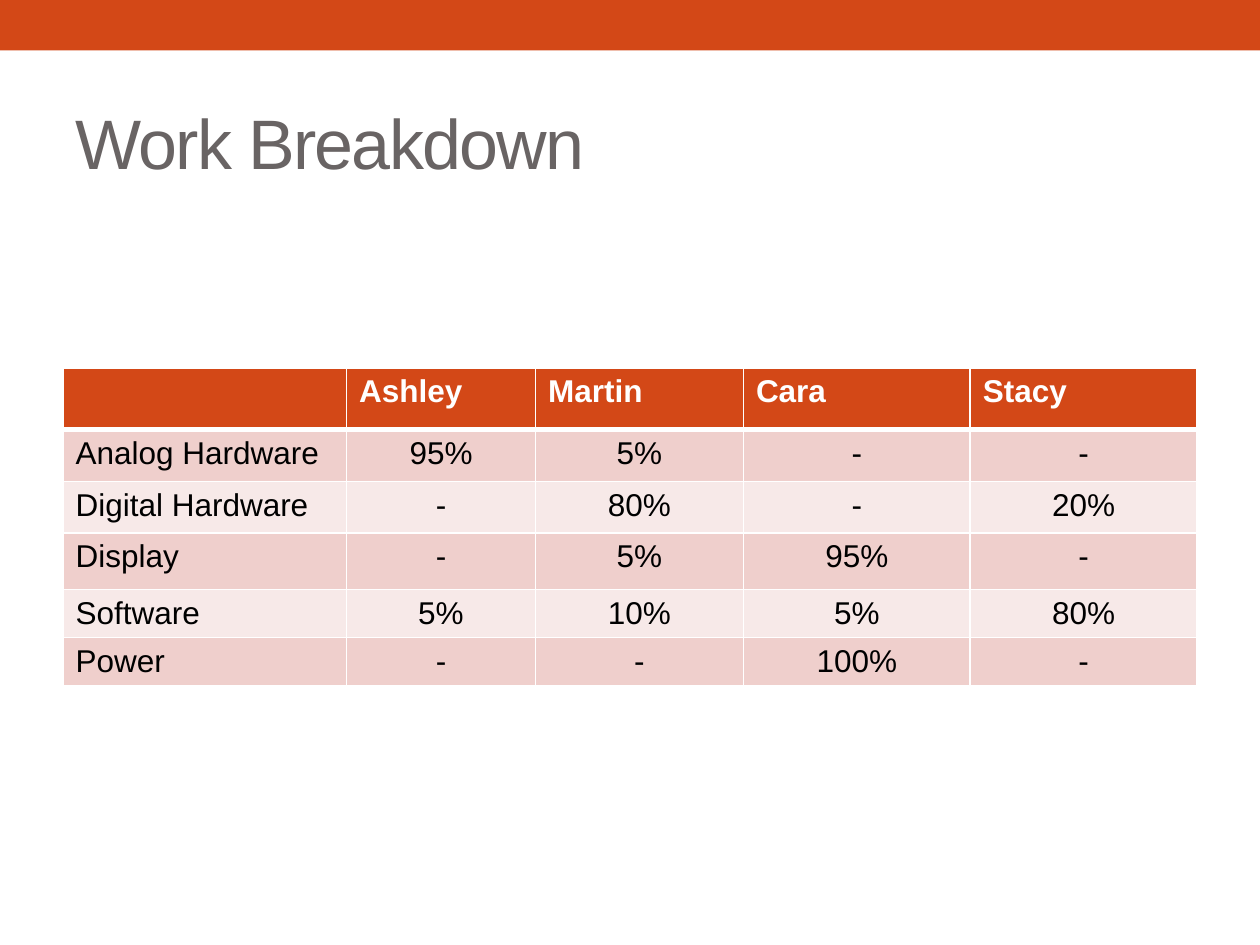
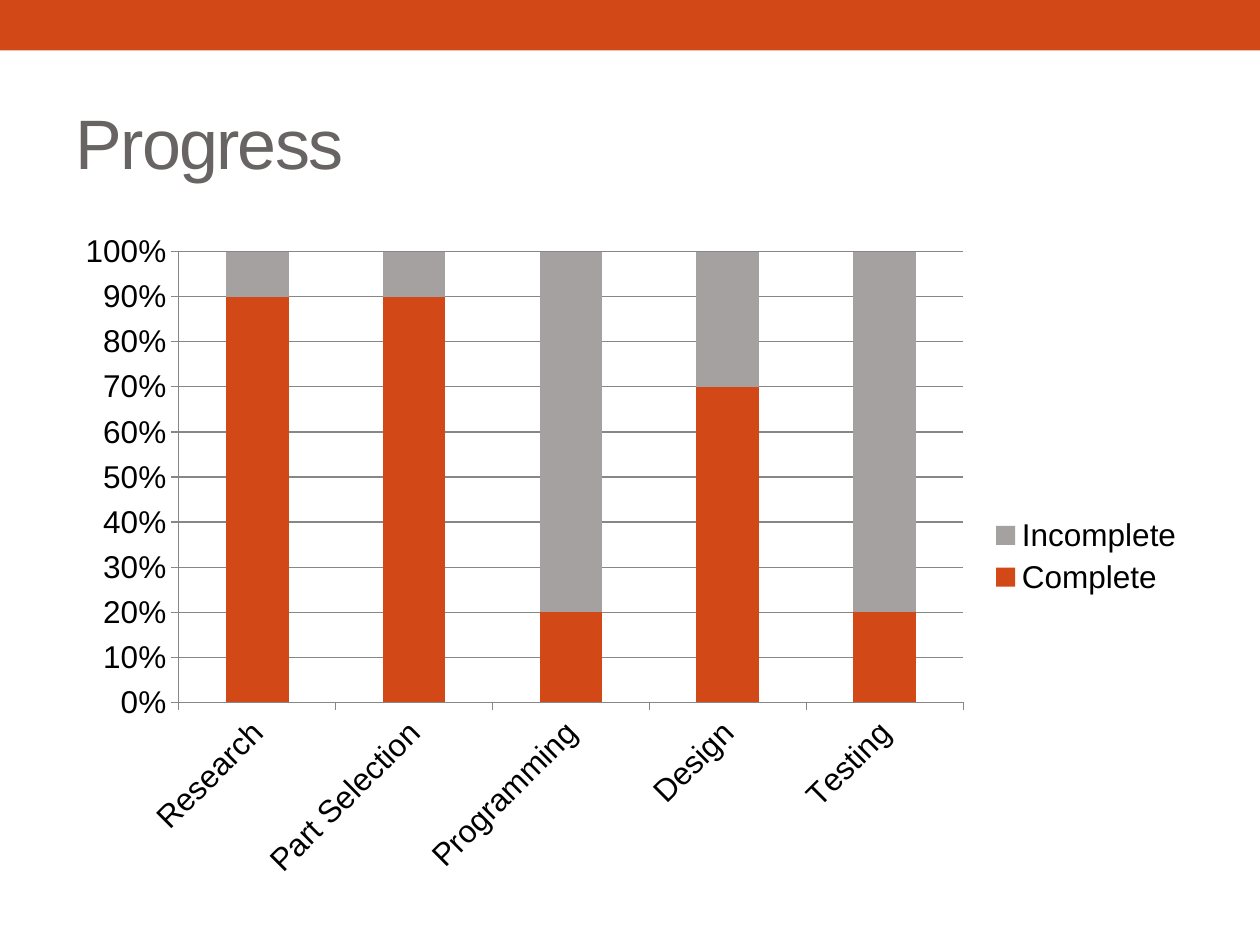
from dataclasses import dataclass

from lxml.etree import SubElement
from pptx import Presentation
from pptx.chart.data import CategoryChartData
from pptx.dml.color import RGBColor
from pptx.enum.chart import XL_CHART_TYPE, XL_LEGEND_POSITION, XL_TICK_MARK
from pptx.enum.shapes import MSO_SHAPE
from pptx.enum.text import MSO_ANCHOR, PP_ALIGN
from pptx.oxml.ns import qn
from pptx.util import Inches, Pt

# Shared look
FONT = "Arial"
ORANGE, GREY, TITLE_GREY = "D34817", "A6A1A1", "696464"
PINK, PALE_PINK = "EFCFCC", "F7E9E8"
WHITE, BLACK, LINE_GREY = "FFFFFF", "000000", "878787"
TITLE_FORMAT = {"name": FONT, "size": Pt(40), "bold": False}
BODY_FORMAT = {"name": FONT, "size": Pt(18), "bold": False}
HEADER_FORMAT = BODY_FORMAT | {"bold": True}


@dataclass(frozen=True)
class Box:
    left: float
    top: float
    width: float
    height: float

    def lengths(self):
        return tuple(Inches(value) for value in
                     (self.left, self.top, self.width, self.height))


@dataclass(frozen=True)
class Series:
    name: str
    values: tuple[int, ...]
    color: str


BAND_BOX = Box(0, 0, 10, 0.4)
TITLE_BOX = Box(0.5, 0.58, 9, 1.08)
TABLE_BOX = Box(0.5, 2.92, 9, 2.52)
CHART_BOX = Box(0.5, 1.75, 9, 5.33)

# Slide contents
PEOPLE = ("", "Ashley", "Martin", "Cara", "Stacy")
WORK_SHARES = (
    ("Analog Hardware", "95%", "5%", "-", "-"),
    ("Digital Hardware", "-", "80%", "-", "20%"),
    ("Display", "-", "5%", "95%", "-"),
    ("Software", "5%", "10%", "5%", "80%"),
    ("Power", "-", "-", "100%", "-"),
)
COLUMN_WIDTHS = (2.25, 1.5, 1.65, 1.8, 1.8)
ROW_HEIGHTS = (0.49, 0.41, 0.41, 0.45, 0.38, 0.38)

TASKS = ("Research", "Part Selection", "Programming", "Design", "Testing")
COMPLETE = (90, 90, 20, 70, 20)
PROGRESS = (
    Series("Complete", COMPLETE, ORANGE),
    Series("Incomplete", tuple(100 - value for value in COMPLETE), GREY),
)


def rgb(color: str) -> RGBColor:
    return RGBColor.from_string(color)


def set_values(target, values: dict) -> None:
    for name, value in values.items():
        setattr(target, name, value)


def set_fill(target, color: str) -> None:
    target.fill.solid()
    target.fill.fore_color.rgb = rgb(color)


def set_font(font, values: dict, color: str) -> None:
    set_values(font, values)
    font.color.rgb = rgb(color)


def add_titled_slide(presentation, title_text: str):
    """Add a slide with the top band and the title."""
    slide = presentation.slides.add_slide(presentation.slide_layouts[5])
    band = slide.shapes.add_shape(MSO_SHAPE.RECTANGLE, *BAND_BOX.lengths())
    band.shadow.inherit = False
    set_fill(band, ORANGE)
    band.line.fill.background()

    title = slide.shapes.title
    set_values(title, dict(zip(("left", "top", "width", "height"),
                               TITLE_BOX.lengths())))
    title.text_frame.text = title_text
    title.text_frame.vertical_anchor = MSO_ANCHOR.MIDDLE
    paragraph = title.text_frame.paragraphs[0]
    paragraph.alignment = PP_ALIGN.LEFT
    run = paragraph.runs[0]
    set_font(run.font, TITLE_FORMAT, TITLE_GREY)
    run.font._element.set("spc", "-100")
    return slide


def set_borders(cell, widths: dict[str, float]) -> None:
    """Draw white borders; they must come before the cell's fill."""
    properties = cell._tc.get_or_add_tcPr()
    for side, width in widths.items():
        line = SubElement(properties, qn(f"a:{side}"), w=str(Pt(width)))
        fill = SubElement(line, qn("a:solidFill"))
        SubElement(fill, qn("a:srgbClr"), val=WHITE)


def add_work_table(slide) -> None:
    rows = (PEOPLE, *WORK_SHARES)
    table = slide.shapes.add_table(
        len(rows), len(PEOPLE), *TABLE_BOX.lengths()).table
    for column, width in zip(table.columns, COLUMN_WIDTHS):
        column.width = Inches(width)
    for row, height in zip(table.rows, ROW_HEIGHTS):
        row.height = Inches(height)

    for row_index, texts in enumerate(rows):
        is_header = row_index == 0
        row_fill = ORANGE if is_header else (PALE_PINK, PINK)[row_index % 2]
        borders = {"lnL": 1, "lnR": 1,
                   "lnT": 3 if row_index == 1 else 1,
                   "lnB": 3 if is_header else 1}
        for column_index, text in enumerate(texts):
            cell = table.cell(row_index, column_index)
            cell.text = text
            set_borders(cell, borders)
            set_fill(cell, row_fill)
            paragraph = cell.text_frame.paragraphs[0]
            centred = not is_header and column_index > 0
            paragraph.alignment = PP_ALIGN.CENTER if centred else PP_ALIGN.LEFT
            for run in paragraph.runs:
                set_font(run.font,
                         HEADER_FORMAT if is_header else BODY_FORMAT,
                         WHITE if is_header else BLACK)


def add_progress_chart(slide) -> None:
    data = CategoryChartData()
    data.categories = TASKS
    for series in PROGRESS:
        data.add_series(series.name, series.values)
    chart = slide.shapes.add_chart(
        XL_CHART_TYPE.COLUMN_STACKED_100, *CHART_BOX.lengths(), data).chart
    set_font(chart.font, BODY_FORMAT, BLACK)
    chart.has_title = False

    # Legend
    chart.has_legend = True
    set_values(chart.legend, {"position": XL_LEGEND_POSITION.RIGHT,
                              "include_in_layout": False})

    # Columns
    plot = chart.plots[0]
    set_values(plot, {"gap_width": 150, "overlap": 100,
                      "vary_by_categories": False})
    for drawn, series in zip(plot.series, PROGRESS):
        set_fill(drawn.format, series.color)

    # Axes
    value_axis = chart.value_axis
    value_axis.has_major_gridlines = True
    set_values(value_axis.tick_labels, {"number_format": "0%",
                                        "number_format_is_linked": False})
    for axis in (chart.category_axis, value_axis):
        axis.major_tick_mark = XL_TICK_MARK.OUTSIDE
    for lined in (chart.category_axis, value_axis, value_axis.major_gridlines):
        lined.format.line.color.rgb = rgb(LINE_GREY)
        lined.format.line.width = Pt(0.75)


def main() -> None:
    presentation = Presentation()
    set_values(presentation, {"slide_width": Inches(10),
                              "slide_height": Inches(7.5)})
    add_work_table(add_titled_slide(presentation, "Work Breakdown"))
    add_progress_chart(add_titled_slide(presentation, "Progress"))
    presentation.save("out.pptx")


if __name__ == "__main__":
    main()
